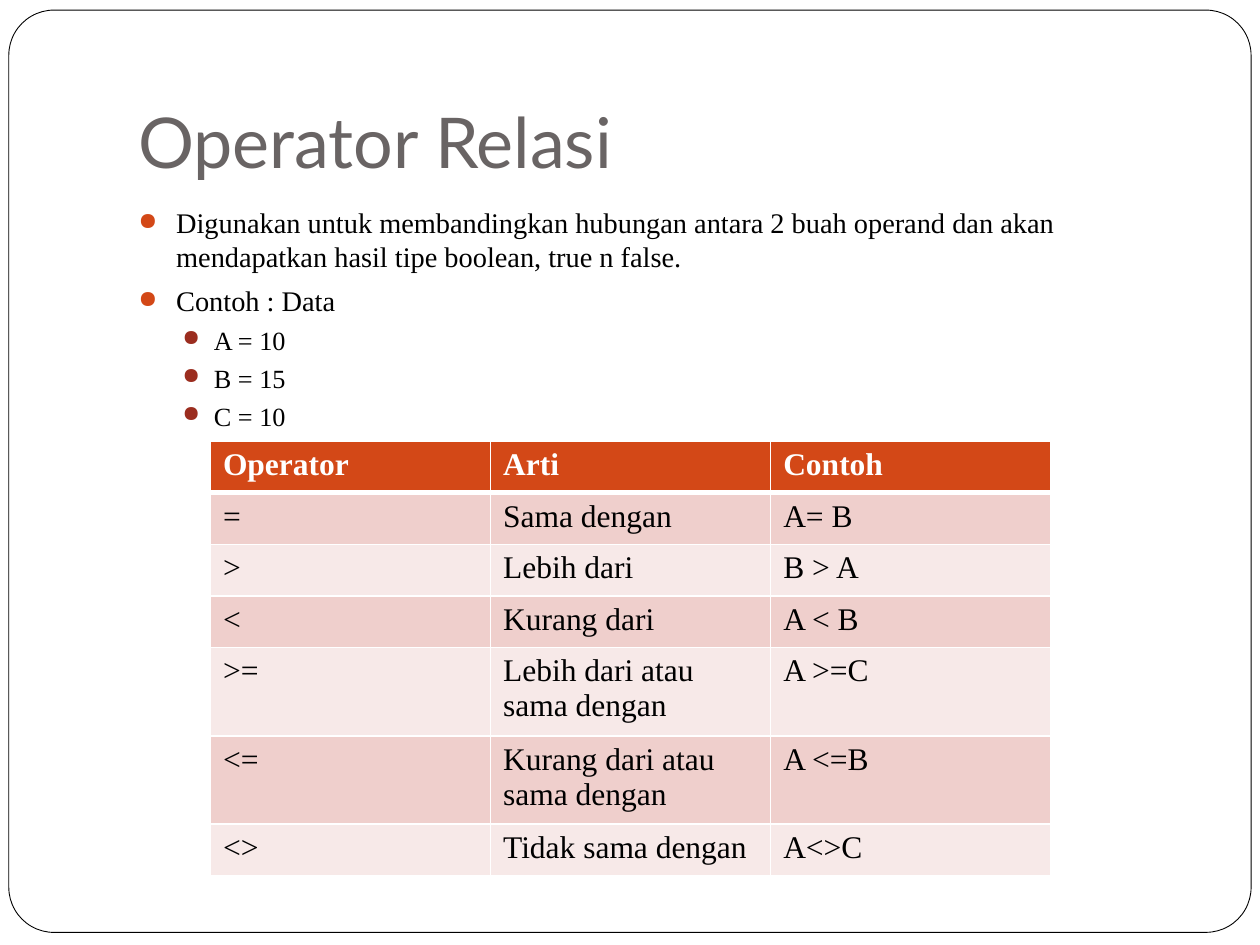
from dataclasses import dataclass

from lxml import etree
from pptx import Presentation
from pptx.dml.color import RGBColor
from pptx.enum import shapes, text
from pptx.oxml.ns import qn
from pptx.util import Inches, Pt

COLORS = {
    "white": "FFFFFF", "black": "000000", "title": "696464", "accent": "D34817",
    "sub": "9B2D1F", "odd": "EFCFCC", "even": "F7E9E8",
}
SERIF = "Times New Roman"


@dataclass(frozen=True)
class Level:
    """Look of one bullet level."""
    indent: float
    hanging: float
    size: float
    before: float
    bullet: str


@dataclass(frozen=True)
class Item:
    """One bullet line."""
    words: str
    level: int = 0


LEVELS = [Level(0.3, 0.3, 16.2, 5.8, "accent"), Level(0.6, 0.25, 15, 3.7, "sub")]
ITEMS = [
    Item("Digunakan untuk membandingkan hubungan antara 2 buah operand dan akan "
         "mendapatkan hasil tipe boolean, true n false."),
    Item("Contoh : Data"),
    Item("A = 10", 1),
    Item("B = 15", 1),
    Item("C = 10", 1),
]
ROWS = [
    ("Operator", "Arti", "Contoh"),
    ("=", "Sama dengan", "A= B"),
    (">", "Lebih dari", "B > A"),
    ("<", "Kurang dari", "A < B"),
    (">=", "Lebih dari atau sama dengan", "A >=C"),
    ("<=", "Kurang dari atau sama dengan", "A <=B"),
    ("<>", "Tidak sama dengan", "A<>C"),
]


def rgb(name: str) -> RGBColor:
    """Look up a named colour."""
    return RGBColor.from_string(COLORS[name])


def style(p, size: float, color: str, font: str = SERIF, bold: bool = False) -> None:
    """Format every run of a paragraph."""
    for r in p.runs:
        r.font.name, r.font.size, r.font.bold = font, Pt(size), bold
        r.font.color.rgb = rgb(color)


def add_frame(slide) -> None:
    """Draw the rounded page frame."""
    sp = slide.shapes.add_shape(shapes.MSO_SHAPE.ROUNDED_RECTANGLE,
                                Inches(0.07), Inches(0.08), Inches(9.86), Inches(7.32))
    sp.adjustments[0] = 0.049
    sp.shadow.inherit = False
    sp.fill.solid()
    sp.fill.fore_color.rgb = rgb("white")
    sp.line.color.rgb = rgb("black")
    sp.line.width = Pt(0.5)


def add_title(slide, words: str) -> None:
    """Add the slide title."""
    tf = slide.shapes.add_textbox(Inches(1), Inches(0.3), Inches(8.5), Inches(1.25)).text_frame
    tf.word_wrap = True
    tf.vertical_anchor = text.MSO_ANCHOR.BOTTOM
    tf.margin_bottom = Inches(0.1)
    tf.text = words
    style(tf.paragraphs[0], 40, "title", "Lato")


def set_bullet(p, level: Level) -> None:
    """Give a paragraph its hanging round bullet."""
    pPr = p._p.get_or_add_pPr()
    pPr.set("marL", str(Inches(level.indent)))
    pPr.set("indent", str(-Inches(level.hanging)))
    clr = etree.SubElement(pPr, qn("a:buClr"))
    etree.SubElement(clr, qn("a:srgbClr"), val=COLORS[level.bullet])
    etree.SubElement(pPr, qn("a:buSzPct"), val="85000")
    etree.SubElement(pPr, qn("a:buChar"), char="●")


def add_bullets(slide, items: list[Item]) -> None:
    """Add the bulleted body text."""
    tf = slide.shapes.add_textbox(Inches(1), Inches(1.58), Inches(8.5), Inches(1.67)).text_frame
    tf.word_wrap = True
    for i, item in enumerate(items):
        p = tf.add_paragraph() if i else tf.paragraphs[0]
        level = LEVELS[item.level]
        p.text, p.level = item.words, item.level
        p.space_before = Pt(level.before)
        set_bullet(p, level)
        style(p, level.size, "black")


def set_borders(cell, bottom: float) -> None:
    """Draw white cell borders."""
    tcPr = cell._tc.get_or_add_tcPr()
    for i, (tag, width) in enumerate([("lnL", 1), ("lnR", 1), ("lnT", 1), ("lnB", bottom)]):
        ln = etree.Element(qn(f"a:{tag}"), w=str(Pt(width)))
        fill = etree.SubElement(ln, qn("a:solidFill"))
        etree.SubElement(fill, qn("a:srgbClr"), val=COLORS["white"])
        tcPr.insert(i, ln)


def add_operators(slide, rows: list[tuple[str, ...]]) -> None:
    """Add the operator table with banded rows."""
    row_height = Inches(0.41)
    table = slide.shapes.add_table(len(rows), len(rows[0]), Inches(1.67), Inches(3.5),
                                   Inches(6.67), row_height * len(rows)).table
    for i, row in enumerate(rows):
        table.rows[i].height = row_height
        head = i == 0
        band = "accent" if head else ("odd" if i % 2 else "even")
        for j, words in enumerate(row):
            cell = table.cell(i, j)
            cell.text = words
            cell.fill.solid()
            cell.fill.fore_color.rgb = rgb(band)
            set_borders(cell, 3 if head else 1)
            style(cell.text_frame.paragraphs[0], 18, "white" if head else "black", bold=head)


def main() -> None:
    """Build and save the slide."""
    prs = Presentation()
    prs.slide_width, prs.slide_height = Inches(10), Inches(7.5)
    slide = prs.slides.add_slide(prs.slide_layouts[6])
    add_frame(slide)
    add_title(slide, "Operator Relasi")
    add_bullets(slide, ITEMS)
    add_operators(slide, ROWS)
    prs.save("out.pptx")


if __name__ == "__main__":
    main()
